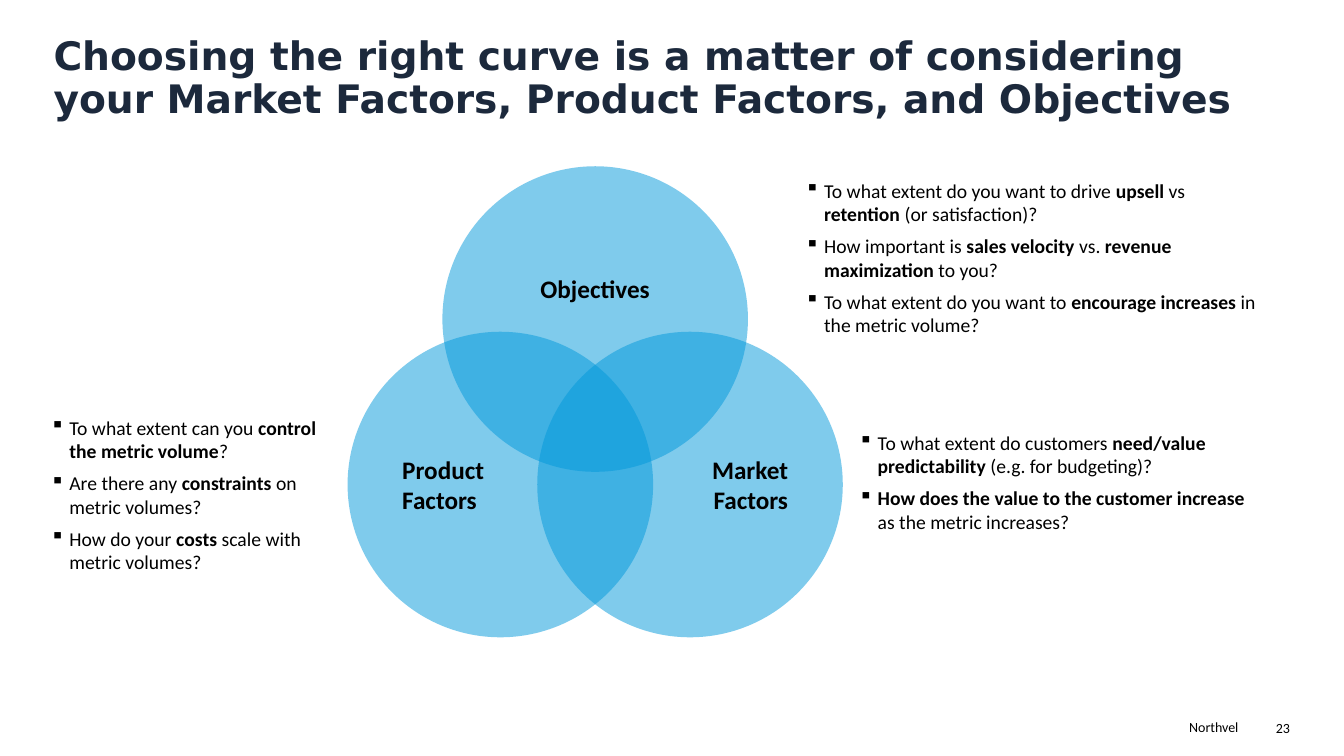
from lxml import etree
from pptx import Presentation
from pptx.dml.color import RGBColor
from pptx.enum.shapes import MSO_SHAPE
from pptx.enum.text import MSO_ANCHOR, PP_ALIGN
from pptx.oxml.ns import qn
from pptx.util import Cm, Pt

LEFT, CENTER, RIGHT = PP_ALIGN.LEFT, PP_ALIGN.CENTER, PP_ALIGN.RIGHT
TOP, MIDDLE, BOTTOM = MSO_ANCHOR.TOP, MSO_ANCHOR.MIDDLE, MSO_ANCHOR.BOTTOM
ELLIPSE = MSO_SHAPE.OVAL

BLACK, NAVY, BLUE = "000000", "1C293C", "0098DB"
CIRCLE_SIZE = 7.7
BULLET_INDENT = Cm(0.48)


def color(hex_value):
    return RGBColor.from_string(hex_value)


def write_text(shape, lines, frame_format, paragraph_format, font_format,
               font_color=BLACK, bullet=None):
    frame = shape.text_frame
    for name, value in frame_format.items():
        setattr(frame, name, value)
    for index, line in enumerate(lines):
        paragraph = frame.paragraphs[0] if index == 0 else frame.add_paragraph()
        for name, value in paragraph_format.items():
            setattr(paragraph, name, value)
        if index and bullet:
            paragraph.space_before = Pt(6)
        if bullet:
            properties = paragraph._p.get_or_add_pPr()
            properties.set("marL", str(BULLET_INDENT))
            properties.set("indent", str(-BULLET_INDENT))
            etree.SubElement(properties, qn("a:buChar")).set("char", bullet)
        for position, part in enumerate(line.split("*")):
            if part:
                run = paragraph.add_run()
                run.text = part
                for name, value in font_format.items():
                    setattr(run.font, name, value)
                run.font.color.rgb = color(font_color)
                if position % 2:
                    run.font.bold = True


presentation = Presentation()
presentation.slide_width = Cm(33.87)
presentation.slide_height = Cm(19.05)
slide = presentation.slides.add_slide(presentation.slide_layouts[6])

box_format = {"word_wrap": True, "margin_left": 0, "margin_right": 0,
              "margin_top": Cm(0.13), "margin_bottom": Cm(0.13),
              "vertical_anchor": TOP}
footer_font = {"name": "Calibri", "size": Pt(10)}
question_font = {"name": "Calibri", "size": Pt(14)}
circle_font = {"name": "Calibri", "size": Pt(18), "bold": True}
title_font = {"name": "DejaVu Sans", "size": Pt(28), "bold": True}

footers = [("Northvel", 23.39, 17.98, 7.82), ("23", 30.1, 18.01, 2.41)]
for text, left, top, width in footers:
    footer = slide.shapes.add_textbox(Cm(left), Cm(top), Cm(width), Cm(0.69))
    write_text(footer, [text], box_format, {"alignment": RIGHT}, footer_font)

title = slide.shapes.add_textbox(Cm(1.35), Cm(1.3), Cm(31.17), Cm(1.9))
write_text(title,
           ["Choosing the right curve is a matter of considering your "
            "Market Factors, Product Factors, and Objectives"],
           {**box_format, "vertical_anchor": BOTTOM},
           {"alignment": LEFT, "line_spacing": 0.9}, title_font, NAVY)

circles = [
    (["Objectives"], 11.15, 4.19, CENTER, 1.65),
    (["Product", "Factors"], 8.76, 8.36, LEFT, 0.13),
    (["Market", "Factors"], 13.54, 8.36, RIGHT, 0.13),
]
for lines, left, top, alignment, bottom_margin in circles:
    circle = slide.shapes.add_shape(ELLIPSE, Cm(left), Cm(top),
                                    Cm(CIRCLE_SIZE), Cm(CIRCLE_SIZE))
    circle.shadow.inherit = False
    circle.line.fill.background()
    circle.fill.solid()
    circle.fill.fore_color.rgb = color(BLUE)
    fill_color = circle._element.spPr.find(qn("a:solidFill"))[0]
    etree.SubElement(fill_color, qn("a:alpha")).set("val", "50000")
    write_text(circle, lines,
               {"word_wrap": True, "vertical_anchor": MIDDLE,
                "margin_bottom": Cm(bottom_margin)},
               {"alignment": alignment}, circle_font)

question_boxes = [
    (20.29, 4.37, 11.56, 4.27, [
        "To what extent do you want to drive *upsell* vs *retention* (or satisfaction)?",
        "How important is *sales velocity* vs. *revenue maximization* to you?",
        "To what extent do you want to *encourage increases *in the metric volume?",
    ]),
    (21.64, 10.72, 9.75, 2.87, [
        "To what extent do customers *need/value predictability* (e.g. for budgeting)?",
        "*How does the value to the customer increase *as the metric increases?",
    ]),
    (1.27, 10.34, 7.42, 4.27, [
        "To what extent can you *control the metric volume*?",
        "Are there any *constraints *on metric volumes?",
        "How do your *costs *scale with metric volumes?",
    ]),
]
for left, top, width, height, questions in question_boxes:
    question_box = slide.shapes.add_textbox(Cm(left), Cm(top), Cm(width), Cm(height))
    write_text(question_box, questions, box_format, {"alignment": LEFT},
               question_font, bullet="▪")

presentation.save("out.pptx")
